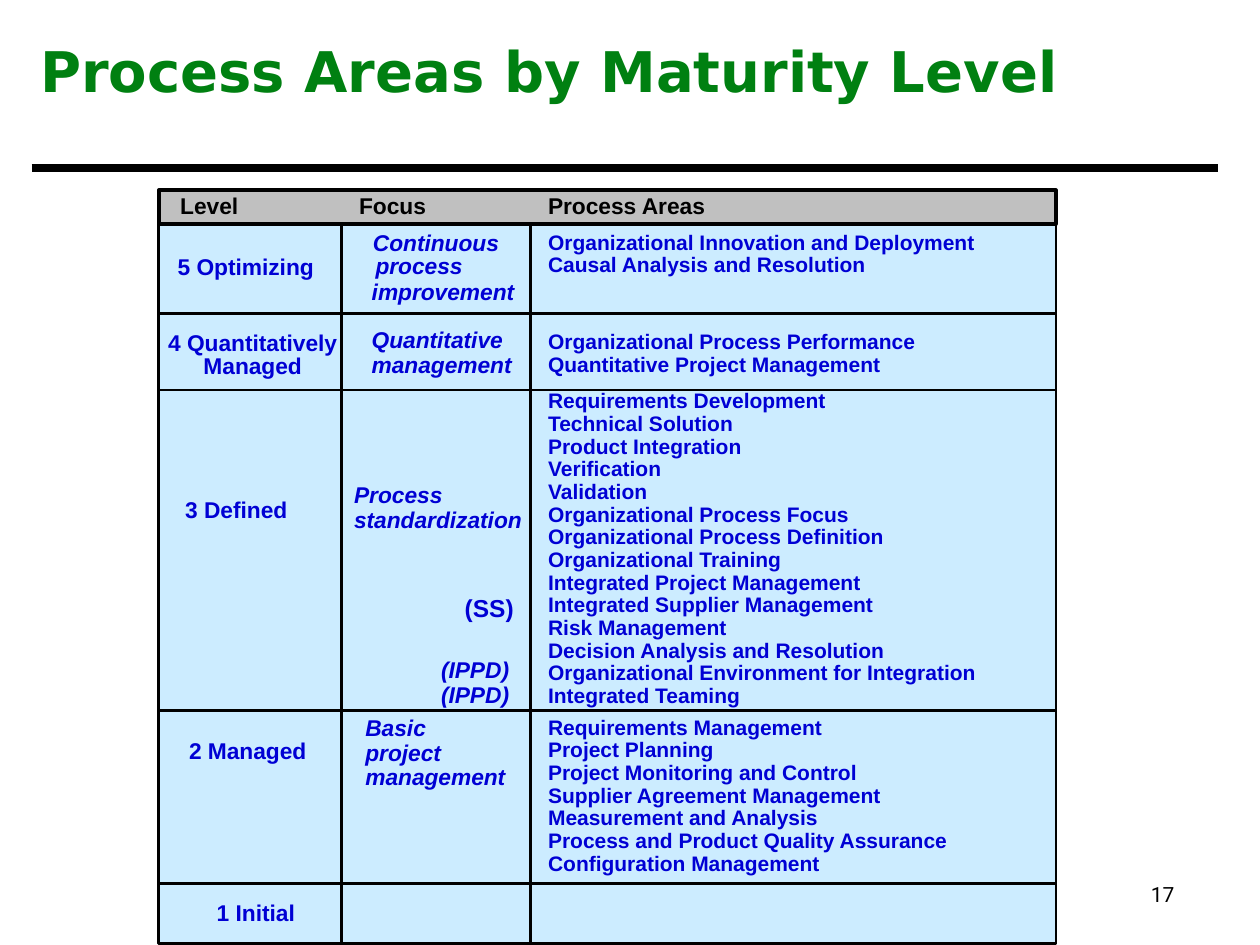
from dataclasses import dataclass
from itertools import accumulate

from lxml.etree import SubElement
from pptx import Presentation
from pptx.dml.color import RGBColor
from pptx.enum.shapes import MSO_CONNECTOR, MSO_SHAPE
from pptx.enum.text import MSO_AUTO_SIZE, PP_ALIGN
from pptx.oxml.ns import qn
from pptx.util import Inches, Pt

COLUMNS, ROWS = 100, 75
CELL = Inches(10) / COLUMNS


@dataclass(frozen=True)
class Theme:
    """Colours, type sizes and line weights of the slide."""
    ink: str = "000000"
    heading: str = "008011"
    entry: str = "0000D4"
    panel: str = "CCECFF"
    header: str = "C0C0C0"
    body_font: str = "Arial"
    title_font: str = "DejaVu Sans"
    number_font: str = "Roboto"
    title_size: int = 32
    number_size: int = 12
    area_size: int = 12
    label_size: int = 13
    note_size: int = 14
    rule: float = 1.5
    header_rule: float = 2
    title_rule: float = 4.5


@dataclass(frozen=True)
class Box:
    """A region measured in grid cells."""
    left: float
    top: float
    width: float
    height: float

    def emu(self):
        """Return the region in slide units."""
        return [round(v * CELL) for v in (self.left, self.top, self.width, self.height)]


@dataclass(frozen=True)
class Label:
    """Lines of text at an offset within a table cell."""
    lines: tuple
    dx: float
    dy: float
    width: float
    size: int = Theme.label_size
    italic: bool = False
    bold: bool = True
    align: PP_ALIGN = PP_ALIGN.LEFT
    spacing: float = 0.9
    font: str = Theme.body_font
    color: str = Theme.entry
    inset: tuple = (0.09, 0.04)


@dataclass(frozen=True)
class Level:
    """One maturity level: row height, name, focus labels and process areas."""
    height: float
    name: Label
    focus: tuple = ()
    areas: tuple = ()
    areas_dy: float = 0


def focus(lines, dx, dy, width):
    """Describe an italic focus label."""
    return Label(lines, dx, dy, width, italic=True)


COLUMN_WIDTHS = (14.5, 15, 41.7)
HEADER_HEIGHT = 2.7
HEADINGS = (("Level", 0.8, 7.1), ("Focus", 0.5, 7.8), ("Process Areas", 0.5, 15))
LEVELS = (
    Level(7.1, Label(("5 Optimizing",), 0.6, 2.1, 13.3),
          (focus(("Continuous",), 1.6, 0.2, 13),
           focus(("process",), 1.8, 2, 9.9),
           focus(("improvement",), 1.5, 4.1, 13.8)),
          ("Organizational Innovation and Deployment", "Causal Analysis and Resolution"), 0.2),
    Level(6.05, Label(("4 Quantitatively", "Managed"), -0.6, 1.1, 16.1,
                      align=PP_ALIGN.CENTER, spacing=0.85),
          (focus(("Quantitative", "management"), 1.5, 0.8, 13.6),),
          ("Organizational Process Performance", "Quantitative Project Management"), 1),
    Level(25.45, Label(("3 Defined",), 0.8, 8.25, 10.7, align=PP_ALIGN.CENTER),
          (focus(("Process", "standardization"), 0.1, 7.05, 15.8),
           Label(("(SS)",), 8.8, 15.85, 6.6, size=Theme.note_size, inset=(0.1, 0.05)),
           focus(("(IPPD)", "(IPPD)"), 7, 20.95, 7.9)),
          ("Requirements Development", "Technical Solution", "Product Integration",
           "Verification", "Validation", "Organizational Process Focus",
           "Organizational Process Definition", "Organizational Training",
           "Integrated Project Management", "Integrated Supplier Management",
           "Risk Management", "Decision Analysis and Resolution",
           "Organizational Environment for Integration", "Integrated Teaming"), -0.35),
    Level(13.7, Label(("2 Managed",), 1.5, 1.9, 11.8),
          (focus(("Basic", "project", "management"), 1, 0.1, 13.6),),
          ("Requirements Management", "Project Planning", "Project Monitoring and Control",
           "Supplier Agreement Management", "Measurement and Analysis",
           "Process and Product Quality Assurance", "Configuration Management"), 0.1),
    Level(4.8, Label(("1 Initial",), 3.3, 1.1, 8.8, align=PP_ALIGN.CENTER)),
)


def add_label(slide, left, top, label):
    """Place a label at its offset from the given corner."""
    margin_x, margin_y = label.inset
    line_height = label.size * label.spacing * 1.21 / 72
    height = (len(label.lines) * line_height + 2 * margin_y) * 10
    region = Box(left + label.dx, top + label.dy, label.width, height)
    frame = slide.shapes.add_textbox(*region.emu()).text_frame
    frame.word_wrap = True
    frame.auto_size = MSO_AUTO_SIZE.SHAPE_TO_FIT_TEXT
    frame.margin_left = frame.margin_right = Inches(margin_x)
    frame.margin_top = frame.margin_bottom = Inches(margin_y)
    frame.text = "\n".join(label.lines)
    for paragraph in frame.paragraphs:
        paragraph.alignment = label.align
        paragraph.line_spacing = label.spacing
        paragraph.font.name = label.font
        paragraph.font.size = Pt(label.size)
        paragraph.font.bold = label.bold
        paragraph.font.italic = label.italic
        paragraph.font.color.rgb = RGBColor.from_string(label.color)


def add_rule(slide, box, weight):
    """Draw a straight rule along a box of no width or no height."""
    left, top, width, height = box.emu()
    rule = slide.shapes.add_connector(
        MSO_CONNECTOR.STRAIGHT, left, top, left + width, top + height)
    rule.line.color.rgb = RGBColor.from_string(Theme.ink)
    rule.line.width = Pt(weight)
    SubElement(rule._element.spPr, qn("a:effectLst"))


def add_panel(slide, box, fill, weight):
    """Draw a filled and outlined rectangle."""
    panel = slide.shapes.add_shape(MSO_SHAPE.RECTANGLE, *box.emu())
    panel.shadow.inherit = False
    panel.fill.solid()
    panel.fill.fore_color.rgb = RGBColor.from_string(fill)
    panel.line.color.rgb = RGBColor.from_string(Theme.ink)
    panel.line.width = Pt(weight)


def add_title(slide, box):
    """Place the title with the heavy rule along the bottom of its box."""
    add_label(slide, box.left, box.top, Label(
        ("Process Areas by Maturity Level",), 0, 0, 86.3, size=Theme.title_size,
        spacing=0.87, font=Theme.title_font, color=Theme.heading, inset=(0.07, 0.03)))
    add_rule(slide, Box(box.left, box.top + box.height, box.width, 0), Theme.title_rule)


def add_level_grid(slide, box):
    """Draw the panel, its header band and the dividing rules."""
    add_panel(slide, box, Theme.panel, Theme.rule)
    body_top = box.top + HEADER_HEIGHT
    for left in accumulate(COLUMN_WIDTHS[:-1], initial=box.left):
        if left > box.left:
            add_rule(slide, Box(left, body_top, 0, box.height - HEADER_HEIGHT), Theme.rule)
    for top in accumulate((level.height for level in LEVELS[:-1]), initial=body_top):
        if top > body_top:
            add_rule(slide, Box(box.left, top, box.width, 0), Theme.rule)
    add_panel(slide, Box(box.left, box.top, box.width, HEADER_HEIGHT),
              Theme.header, Theme.header_rule)


def add_level_text(slide, box):
    """Fill the headings and the row of each maturity level."""
    lefts = list(accumulate(COLUMN_WIDTHS[:-1], initial=box.left))
    for left, (heading, dx, width) in zip(lefts, HEADINGS):
        add_label(slide, left, box.top, Label((heading,), dx, 0, width, color=Theme.ink))
    name_left, focus_left, areas_left = lefts
    top = box.top + HEADER_HEIGHT
    for level in LEVELS:
        add_label(slide, name_left, top, level.name)
        for label in level.focus:
            add_label(slide, focus_left, top, label)
        if level.areas:
            add_label(slide, areas_left, top, Label(
                level.areas, 0.5, level.areas_dy, 41.1, size=Theme.area_size))
        top += level.height


def add_page_number(slide, box):
    """Place the page number at the right of its box."""
    add_label(slide, box.left, box.top, Label(
        ("17",), 0, 0, box.width, size=Theme.number_size, bold=False, spacing=1,
        align=PP_ALIGN.RIGHT, font=Theme.number_font, color=Theme.ink, inset=(0.1, 0.05)))


def main():
    """Build and save the slide."""
    deck = Presentation()
    deck.slide_width, deck.slide_height = round(COLUMNS * CELL), round(ROWS * CELL)
    slide = deck.slides.add_slide(deck.slide_layouts[6])
    levels = Box(12.6, 15.1, sum(COLUMN_WIDTHS), 59.8)
    add_title(slide, Box(2.5, 3.3, 94.2, 10))
    add_level_grid(slide, levels)
    add_level_text(slide, levels)
    add_page_number(slide, Box(73.4, 69.5, 20.8, 3.6))
    deck.save("out.pptx")


if __name__ == "__main__":
    main()
